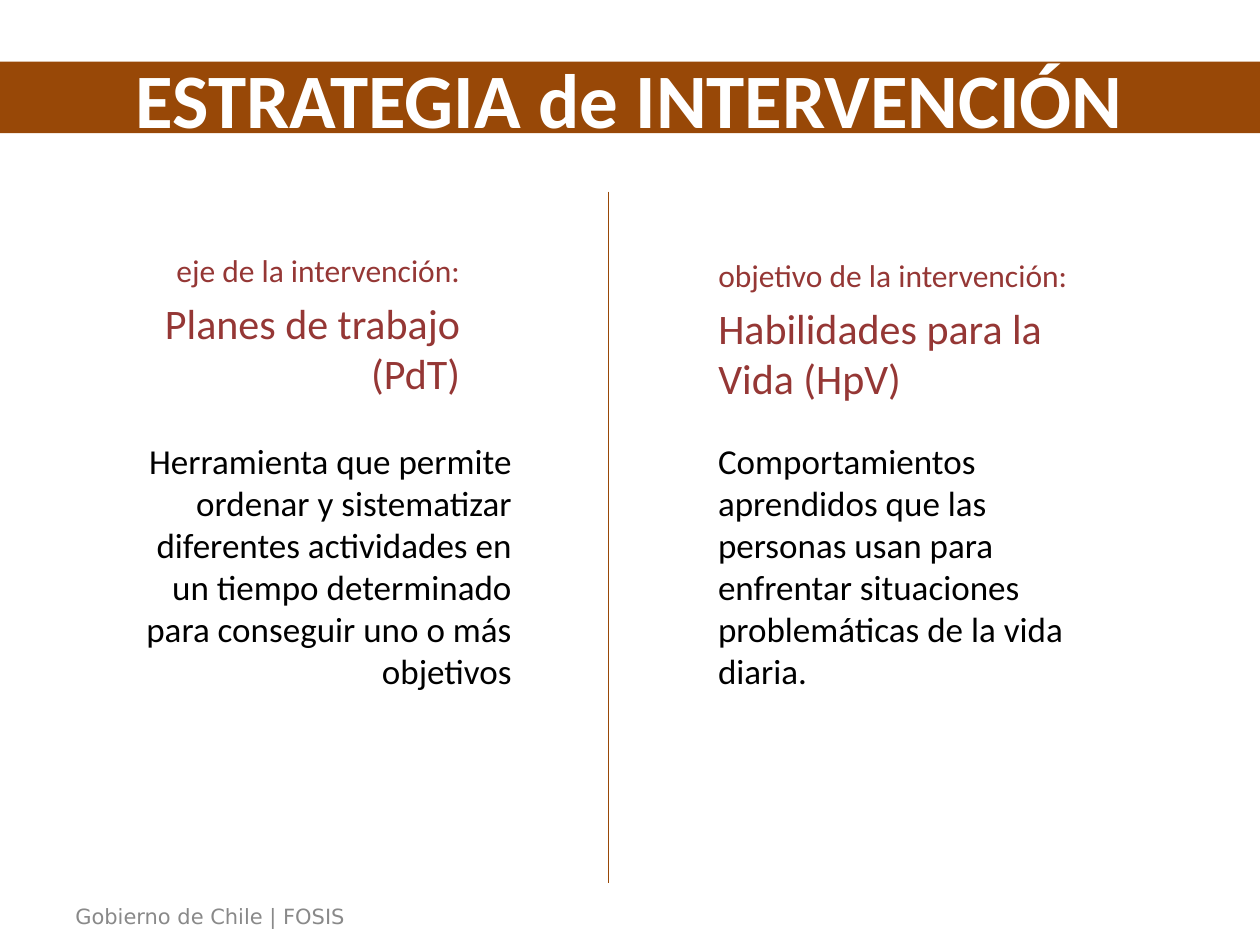
"""Build the slide on the axis and the goal of the intervention strategy."""
import pptx
import pptx.util
from lxml import etree
from pptx.dml.color import RGBColor
from pptx.enum.shapes import MSO_CONNECTOR, MSO_SHAPE
from pptx.enum.text import MSO_ANCHOR, PP_ALIGN
from pptx.oxml.ns import qn

Pt = pptx.util.Pt
BROWN = RGBColor(0x98, 0x48, 0x07)
RED = RGBColor(0x95, 0x37, 0x35)
BLACK = RGBColor(0, 0, 0)
WHITE = RGBColor(0xFF, 0xFF, 0xFF)
GRAY = RGBColor(0x89, 0x89, 0x89)

SLIDE_WIDTH, SLIDE_HEIGHT = 720, 540
TITLE = "ESTRATEGIA de INTERVENCIÓN"
FOOTER = "Gobierno de Chile | FOSIS"
COLUMNS = [
    {
        "align": PP_ALIGN.RIGHT,
        "label": "eje de la intervención:",
        "heading": "Planes de trabajo (PdT)",
        "heading_box": (79, 142.4, 191, 86),
        "body": "Herramienta que permite ordenar y sistematizar diferentes "
                "actividades en un tiempo determinado para conseguir uno o "
                "más objetivos",
        "body_box": (75, 245.5, 224.5, 155.5),
    },
    {
        "align": PP_ALIGN.LEFT,
        "label": "objetivo de la intervención:",
        "heading": "Habilidades para la Vida (HpV)",
        "heading_box": (403.4, 145.3, 229, 86),
        "body": "Comportamientos aprendidos que las personas usan para "
                "enfrentar situaciones problemáticas de la vida diaria.",
        "body_box": (403.2, 254.2, 242, 138.2),
    },
]


def write(frame, lines, color, align, font="Calibri", bold=False):
    """Fill a text frame with (text, size) lines."""
    frame.word_wrap = True
    frame.vertical_anchor = MSO_ANCHOR.MIDDLE
    frame.margin_left = frame.margin_right = Pt(7.2)
    frame.margin_top = frame.margin_bottom = Pt(7.2)
    for index, (text, size) in enumerate(lines):
        paragraph = frame.add_paragraph() if index else frame.paragraphs[0]
        paragraph.text = text
        paragraph.alignment = align
        if index:
            paragraph.space_before = Pt(size * 0.2)
        paragraph.font.name = font
        paragraph.font.size = Pt(size)
        paragraph.font.bold = bold
        paragraph.font.color.rgb = color


def add_text(slide, box, *style, **options):
    """Add a text box at a place given in points."""
    frame = slide.shapes.add_textbox(*map(Pt, box)).text_frame
    write(frame, *style, **options)
    return frame


def main():
    """Lay out the banner, the two columns, the divider and the footer."""
    deck = pptx.Presentation()
    deck.slide_width, deck.slide_height = Pt(SLIDE_WIDTH), Pt(SLIDE_HEIGHT)
    slide = deck.slides.add_slide(deck.slide_layouts[6])

    footer = add_text(slide, (36, 512.6, 175, 21.6), [(FOOTER, 12)], GRAY,
                      PP_ALIGN.LEFT, font="DejaVu Sans")
    footer.word_wrap = False
    footer.margin_top = footer.margin_bottom = Pt(3.6)

    banner = slide.shapes.add_shape(
        MSO_SHAPE.RECTANGLE, 0, Pt(35.2), Pt(SLIDE_WIDTH), Pt(41))
    banner.shadow.inherit = False
    banner.fill.solid()
    banner.fill.fore_color.rgb = BROWN
    banner.line.fill.background()
    write(banner.text_frame, [(TITLE, 44)], WHITE, PP_ALIGN.CENTER, bold=True)

    for column in COLUMNS:
        add_text(slide, column["heading_box"],
                 [(column["label"], 18), (column["heading"], 24)],
                 RED, column["align"])
        add_text(slide, column["body_box"], [(column["body"], 20)],
                 BLACK, column["align"])

    divider = slide.shapes.add_connector(
        MSO_CONNECTOR.STRAIGHT, Pt(347.8), Pt(109.5), Pt(347.8), Pt(504.7))
    divider.line.color.rgb = BROWN
    divider.line.width = Pt(0.75)
    etree.SubElement(divider._element.spPr, qn("a:effectLst"))

    deck.save("out.pptx")


if __name__ == "__main__":
    main()
